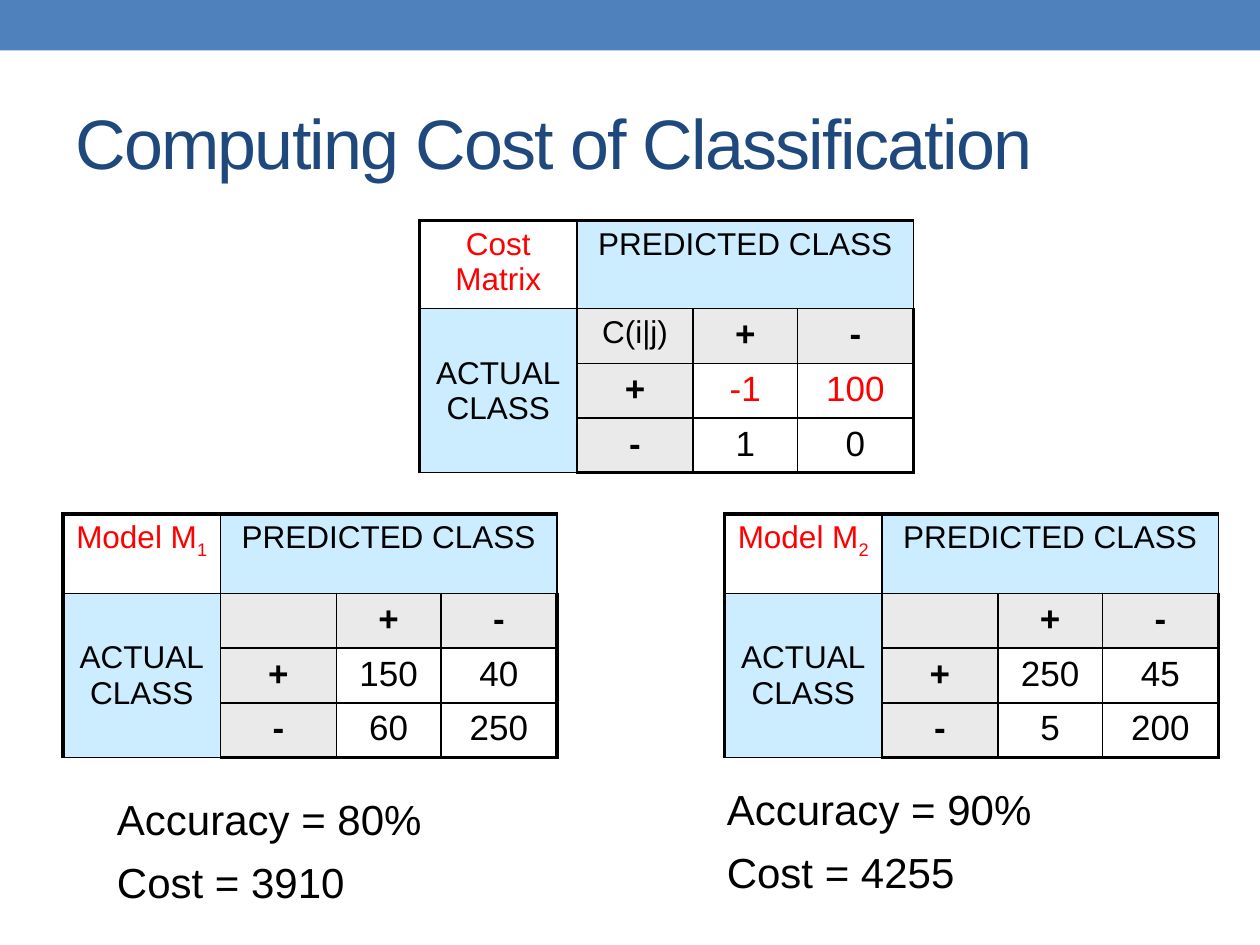
from lxml.etree import SubElement as Sub
from pptx import Presentation
from pptx.dml.color import RGBColor
from pptx.enum.shapes import MSO_SHAPE as Shape
from pptx.enum.text import MSO_ANCHOR as Anchor, PP_ALIGN as Align
from pptx.oxml.ns import qn
from pptx.util import Inches, Pt

TITLE = "Computing Cost of Classification"
RED, BLACK, BLUE, GRAY = "FF0000", "000000", "CCECFF", "EAEAEA"
COLS = [1.25, 0.92, 0.83, 0.92]
ROWS = [0.63, 0.41, 0.42, 0.43]
TABLES = [
    dict(at=(3.33, 1.75), name="Cost Matrix", sub="", key="C(i|j)",
         vals=[["-1", "100"], ["1", "0"]], hot=RED),
    dict(at=(0.5, 4.08), name="Model M", sub="1", key="",
         vals=[["150", "40"], ["60", "250"]], hot=BLACK),
    dict(at=(5.75, 4.08), name="Model M", sub="2", key="",
         vals=[["250", "45"], ["5", "200"]], hot=BLACK),
]
NOTES = [
    ((0.83, 6.25), ["Accuracy = 80%", "Cost = 3910"]),
    ((5.67, 6.17), ["Accuracy = 90%", "Cost = 4255"]),
]


def rgb(code):
    return RGBColor.from_string(code)


def add_run(para, text, size, color=BLACK, bold=False):
    run = para.add_run()
    run.text = text
    font = run.font
    font.name, font.size, font.bold = "Arial", Pt(size), bold
    font.color.rgb = rgb(color)
    return run


def add_box(slide, x, y, w, h):
    frame = slide.shapes.add_textbox(*map(Inches, (x, y, w, h))).text_frame
    frame.word_wrap = True
    return frame


def set_edges(cell, row, col):
    props = cell._tc.get_or_add_tcPr()
    outer = dict(L=col == 0, R=col == len(COLS) - 1,
                 T=row == 0, B=row == len(ROWS) - 1)
    for side, thick in outer.items():
        line = Sub(props, qn("a:ln" + side), w=str(Pt(2.25 if thick else 1)))
        Sub(Sub(line, qn("a:solidFill")), qn("a:srgbClr"), val=BLACK)


def set_fill(cell, color):
    if color:
        cell.fill.solid()
        cell.fill.fore_color.rgb = rgb(color)
    else:
        cell.fill.background()


def fill_for(row, col):
    if row == 0 or col == 0:
        return BLUE if row or col else None
    return GRAY if row == 1 or col == 1 else None


def add_matrix(slide, at, name, sub, key, vals, hot):
    size = map(Inches, (*at, sum(COLS), sum(ROWS)))
    table = slide.shapes.add_table(len(ROWS), len(COLS), *size).table
    table.first_row = table.horz_banding = False
    for col, width in zip(table.columns, COLS):
        col.width = Inches(width)
    for row, height in zip(table.rows, ROWS):
        row.height = Inches(height)
    for r in range(len(ROWS)):
        for c in range(len(COLS)):
            cell = table.cell(r, c)
            set_edges(cell, r, c)
            set_fill(cell, fill_for(r, c))
            cell.text_frame.paragraphs[0].alignment = Align.CENTER
    table.cell(0, 1).merge(table.cell(0, 3))
    table.cell(1, 0).merge(table.cell(3, 0))

    def para(r, c):
        return table.cell(r, c).text_frame.paragraphs[0]

    add_run(para(0, 0), name, 18, RED)
    if sub:
        run = add_run(para(0, 0), sub, 18, RED)
        run.font._element.set("baseline", "-25000")
    add_run(para(0, 1), "PREDICTED CLASS", 18)
    add_run(para(1, 0), "ACTUAL", 18)
    para(1, 0).add_line_break()
    add_run(para(1, 0), "CLASS", 18)
    table.cell(1, 0).vertical_anchor = Anchor.MIDDLE
    if key:
        add_run(para(1, 1), key, 18)
    for i, sign in enumerate("+-", 2):
        add_run(para(1, i), sign, 20, bold=True)
        add_run(para(i, 1), sign, 20, bold=True)
    for r, line in enumerate(vals, 2):
        for c, val in enumerate(line, 2):
            add_run(para(r, c), val, 20, hot if r == 2 else BLACK)


def main():
    prs = Presentation()
    prs.slide_width, prs.slide_height = Inches(10), Inches(7.5)
    slide = prs.slides.add_slide(prs.slide_layouts[6])

    band = slide.shapes.add_shape(Shape.RECTANGLE, 0, 0, Inches(10), Inches(0.4))
    band.shadow.inherit = False
    band.fill.solid()
    band.fill.fore_color.rgb = rgb("4F81BD")
    band.line.fill.background()

    frame = add_box(slide, 0.5, 0.58, 9, 1.08)
    frame.vertical_anchor = Anchor.MIDDLE
    run = add_run(frame.paragraphs[0], TITLE, 40, "1F497D")
    run.font._element.set("spc", "-100")

    for spec_of in TABLES:
        add_matrix(slide, **spec_of)

    for at, lines in NOTES:
        frame = add_box(slide, *at, 3.33, 1.08)
        for i, text in enumerate(lines):
            para = frame.add_paragraph() if i else frame.paragraphs[0]
            para.space_before, para.space_after = Pt(3), Pt(4)
            add_run(para, text, 24)

    prs.save("out.pptx")


if __name__ == "__main__":
    main()
